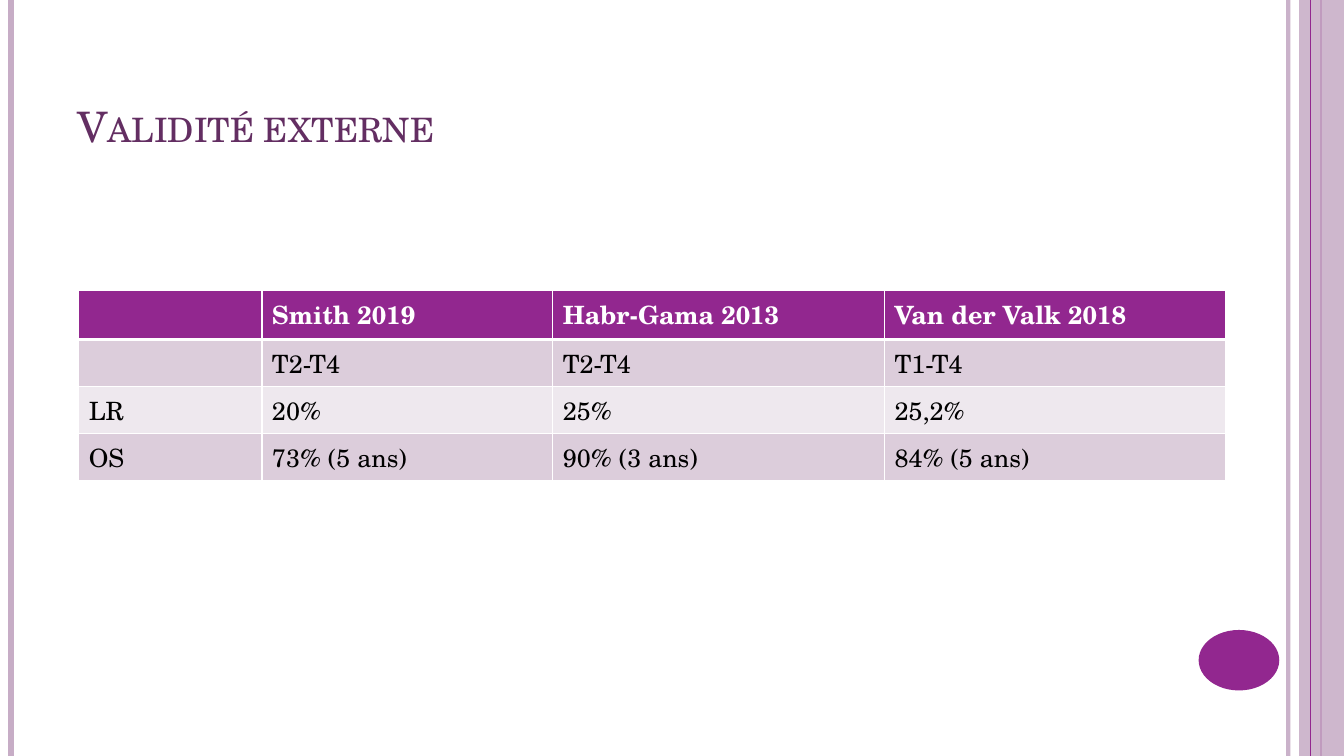
from typing import NamedTuple

from lxml import etree
from pptx import Presentation
from pptx.dml.color import RGBColor
from pptx.enum.shapes import MSO_CONNECTOR, MSO_SHAPE
from pptx.enum.text import MSO_ANCHOR, PP_ALIGN
from pptx.oxml.ns import qn
from pptx.util import Pt

STRAIGHT = MSO_CONNECTOR.STRAIGHT
RECTANGLE, OVAL = MSO_SHAPE.RECTANGLE, MSO_SHAPE.OVAL
BOTTOM, LEFT = MSO_ANCHOR.BOTTOM, PP_ALIGN.LEFT

FONT = "TeX Gyre Schola"
COLORS = {
    "purple": "92278F",
    "lilac": "C7ADC6",
    "plum": "632E62",
    "dark_band": "DCCDDB",
    "light_band": "EEE8EE",
    "white": "FFFFFF",
    "black": "000000",
}
SLIDE_WIDTH, SLIDE_HEIGHT = 960, 540


class Rule(NamedTuple):
    x: float
    color: str
    weight: float
    opacity: int = 100


class Block(NamedTuple):
    kind: MSO_SHAPE
    left: float
    top: float
    width: float
    height: float
    color: str
    opacity: int = 100


BACK_RULES = [
    Rule(920.2, "lilac", 3, 93),
    Rule(7.9, "lilac", 4.5),
    Rule(943.9, "purple", 1.5),
]
SIDE_BAND = Block(RECTANGLE, 928, 0, 32, SLIDE_HEIGHT, "lilac", 87)
FRONT_RULE = Rule(936, "purple", 0.75)
NUMBER_BADGE = Block(OVAL, 856.2, 450, 57.6, 43.2, "purple")

STUDIES = [
    ["", "Smith 2019", "Habr-Gama 2013", "Van der Valk 2018"],
    ["", "T2-T4", "T2-T4", "T1-T4"],
    ["LR", "20%", "25%", "25,2%"],
    ["OS", "73% (5 ans)", "90% (3 ans)", "84% (5 ans)"],
]
COLUMN_WIDTHS = [130.9, 207.8, 236.9, 243.4]
ROW_HEIGHT = 29.2


def rgb(color: str) -> RGBColor:
    return RGBColor.from_string(COLORS[color])


def set_opacity(parent, percent: int) -> None:
    if percent < 100:
        color = next(parent.iter(qn("a:srgbClr")))
        etree.SubElement(color, qn("a:alpha"), val=str(percent * 1000))


def set_font(paragraph, size: float, color: str, bold: bool = False) -> None:
    font = paragraph.font
    font.name, font.size, font.bold = FONT, Pt(size), bold
    font.color.rgb = rgb(color)


def draw_rule(slide, rule: Rule) -> None:
    """Draw a vertical line over the full slide height."""
    line = slide.shapes.add_connector(
        STRAIGHT, Pt(rule.x), Pt(0), Pt(rule.x), Pt(SLIDE_HEIGHT))
    line.line.color.rgb = rgb(rule.color)
    line.line.width = Pt(rule.weight)
    properties = line._element.spPr
    set_opacity(properties, rule.opacity)
    etree.SubElement(properties, qn("a:effectLst"))


def draw_block(slide, block: Block) -> None:
    shape = slide.shapes.add_shape(
        block.kind, Pt(block.left), Pt(block.top), Pt(block.width), Pt(block.height))
    shape.shadow.inherit = False
    shape.fill.solid()
    shape.fill.fore_color.rgb = rgb(block.color)
    shape.line.fill.background()
    set_opacity(shape._element.spPr, block.opacity)


def draw_title(slide, wording: str) -> None:
    title = slide.shapes.title
    title.left, title.top, title.width, title.height = Pt(48), Pt(21.6), Pt(784), Pt(90)
    title.text_frame.text = wording
    title.text_frame.vertical_anchor = BOTTOM
    paragraph = title.text_frame.paragraphs[0]
    paragraph.alignment = LEFT
    set_font(paragraph, 30, "plum")
    paragraph._p.pPr.find(qn("a:defRPr")).set("cap", "small")


def set_borders(cell, weights: dict[str, float]) -> None:
    """Give the cell white edges; the line elements must precede its fill."""
    properties = cell._tc.get_or_add_tcPr()
    for position, (side, weight) in enumerate(weights.items()):
        edge = etree.Element(qn(f"a:ln{side}"), w=str(Pt(weight)))
        fill = etree.SubElement(edge, qn("a:solidFill"))
        etree.SubElement(fill, qn("a:srgbClr"), val=COLORS["white"])
        properties.insert(position, edge)


def draw_studies(slide) -> None:
    table = slide.shapes.add_table(
        len(STUDIES), len(COLUMN_WIDTHS), Pt(56.2), Pt(207.4),
        Pt(sum(COLUMN_WIDTHS)), Pt(ROW_HEIGHT * len(STUDIES))).table
    for column, width in zip(table.columns, COLUMN_WIDTHS):
        column.width = Pt(width)
    for r, values in enumerate(STUDIES):
        table.rows[r].height = Pt(ROW_HEIGHT)
        header = r == 0
        band = "purple" if header else "dark_band" if r % 2 else "light_band"
        weights = {"L": 1, "R": 1, "T": 3 if r == 1 else 1, "B": 3 if header else 1}
        for c, value in enumerate(values):
            cell = table.cell(r, c)
            cell.text = value
            cell.fill.solid()
            cell.fill.fore_color.rgb = rgb(band)
            set_borders(cell, weights)
            set_font(cell.text_frame.paragraphs[0], 18,
                     "white" if header else "black", header)


def main() -> None:
    presentation = Presentation()
    presentation.slide_width = Pt(SLIDE_WIDTH)
    presentation.slide_height = Pt(SLIDE_HEIGHT)
    slide = presentation.slides.add_slide(presentation.slide_layouts[5])
    for rule in BACK_RULES:
        draw_rule(slide, rule)
    draw_block(slide, SIDE_BAND)
    draw_rule(slide, FRONT_RULE)
    draw_block(slide, NUMBER_BADGE)
    draw_title(slide, "Validité externe")
    draw_studies(slide)
    presentation.save("out.pptx")


if __name__ == "__main__":
    main()
